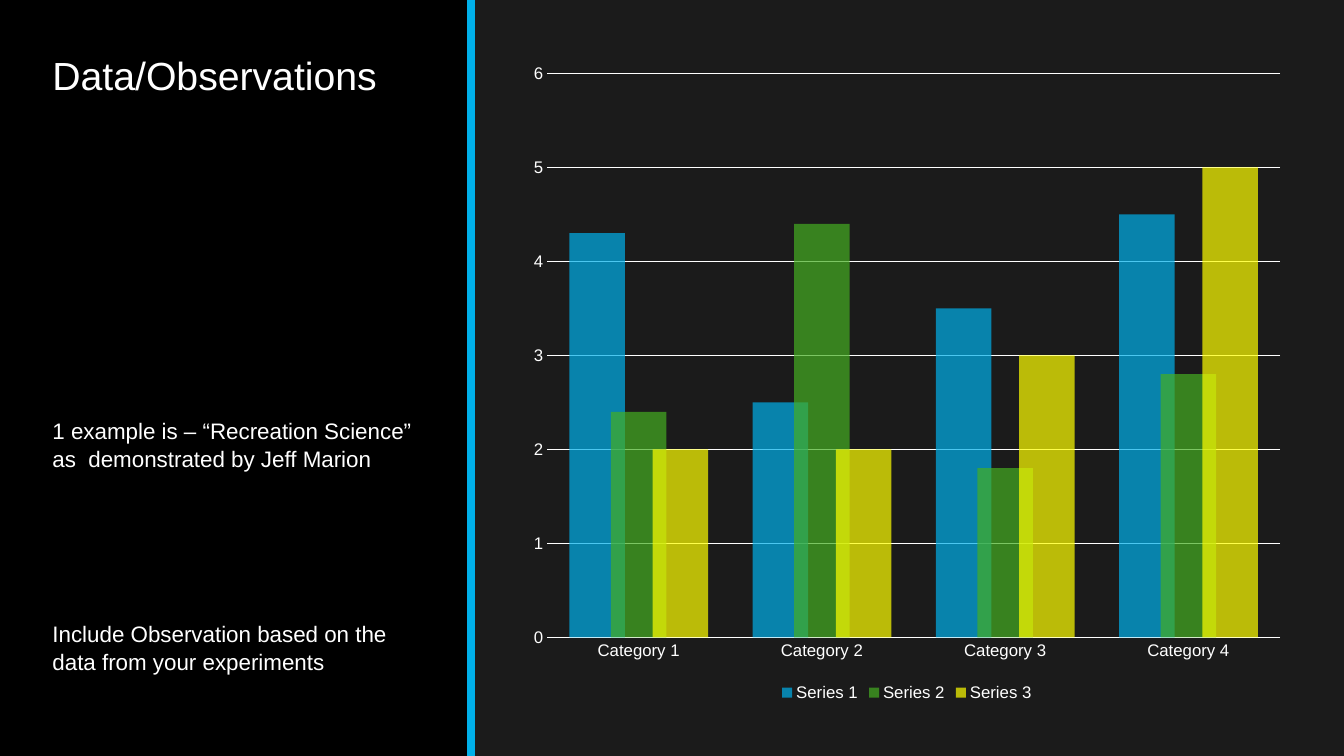
from lxml import etree
from pptx import Presentation
from pptx.chart.data import CategoryChartData
from pptx.dml.color import RGBColor
from pptx.enum.chart import XL_CHART_TYPE, XL_LEGEND_POSITION, XL_TICK_MARK
from pptx.enum.shapes import MSO_CONNECTOR, MSO_SHAPE
from pptx.enum.text import MSO_ANCHOR, MSO_AUTO_SIZE, PP_ALIGN
from pptx.oxml.ns import qn
from pptx.util import Emu, Pt

COLUMNS = XL_CHART_TYPE.COLUMN_CLUSTERED
LEGEND_BOTTOM = XL_LEGEND_POSITION.BOTTOM
NO_TICK = XL_TICK_MARK.NONE
STRAIGHT = MSO_CONNECTOR.STRAIGHT
RECTANGLE = MSO_SHAPE.RECTANGLE
TOP, BOTTOM = MSO_ANCHOR.TOP, MSO_ANCHOR.BOTTOM
NO_AUTOFIT = MSO_AUTO_SIZE.NONE
LEFT = PP_ALIGN.LEFT

EMU_PER_PX = 9144  # 100 px to the inch
SLIDE_W, SLIDE_H = 1333, 750
PANEL_W = 467
FONT = "Arial"
COLORS = {
    "background": "1B1B1B",
    "panel": "000000",
    "text": "FFFFFF",
    "blue": "00B0EA",
    "green": "45AE22",
    "yellow": "FFFF00",
}
BAR_OPACITY = 70
CATEGORIES = [f"Category {number}" for number in range(1, 5)]
SERIES = [
    ("Series 1", (4.3, 2.5, 3.5, 4.5), "blue"),
    ("Series 2", (2.4, 4.4, 1.8, 2.8), "green"),
    ("Series 3", (2, 2, 3, 5), "yellow"),
]
OBSERVATIONS = [
    "1 example is – “Recreation Science” as  demonstrated by Jeff Marion",
    "Include Observation based on the data from your experiments",
]


def px(length):
    return Emu(length * EMU_PER_PX)


def rgb(name):
    return RGBColor.from_string(COLORS[name])


def set_all(target, values):
    for attribute, value in values.items():
        setattr(target, attribute, value)


def set_fill(fill, color):
    fill.solid()
    fill.fore_color.rgb = rgb(color)


def set_line(line, color, points):
    line.color.rgb = rgb(color)
    line.width = Pt(points)


def set_font(font, points):
    set_all(font, {"name": FONT, "size": Pt(points), "bold": False})
    font.color.rgb = rgb("text")


def add_side_panel(slide, title):
    """Add the dark panel behind the title, with its blue edge."""
    panel = slide.shapes.add_shape(RECTANGLE, 0, 0, px(PANEL_W), px(SLIDE_H))
    panel.shadow.inherit = False
    set_fill(panel.fill, "panel")
    panel.line.fill.background()
    edge = slide.shapes.add_connector(
        STRAIGHT, px(PANEL_W), 0, px(PANEL_W), px(SLIDE_H))
    set_line(edge.line, "blue", 6)
    etree.SubElement(edge._element.spPr, qn("a:effectLst"))
    for backdrop in (panel, edge):
        title._element.addprevious(backdrop._element)


def fill_placeholder(holder, box, texts, points, anchor, spacing, gap=0):
    left, top, width, height = map(px, box)
    set_all(holder, {"left": left, "top": top,
                     "width": width, "height": height})
    frame = holder.text_frame
    frame.text = "\n".join(texts)
    set_all(frame, {"word_wrap": True, "auto_size": NO_AUTOFIT,
                    "vertical_anchor": anchor})
    for index, paragraph in enumerate(frame.paragraphs):
        set_all(paragraph, {"alignment": LEFT, "line_spacing": spacing,
                            "space_before": Pt(gap if index else 0)})
        set_font(paragraph.runs[0].font, points)


def style_axis(axis):
    set_all(axis, {"major_tick_mark": NO_TICK, "minor_tick_mark": NO_TICK})
    set_font(axis.tick_labels.font, 12)


def style_bars(series, color):
    set_fill(series.format.fill, color)
    series.invert_if_negative = False
    tint = series.format.fill._xPr.find(qn("a:solidFill"))[0]
    etree.SubElement(tint, qn("a:alpha"), val=str(BAR_OPACITY * 1000))


def add_column_chart(slide, box):
    data = CategoryChartData()
    data.categories = CATEGORIES
    for name, values, _ in SERIES:
        data.add_series(name, values)
    chart = slide.shapes.add_chart(COLUMNS, *map(px, box), data).chart
    set_font(chart.font, 10)
    set_all(chart, {"has_title": False, "has_legend": True})
    set_all(chart.legend, {"position": LEGEND_BOTTOM,
                           "include_in_layout": False})
    set_font(chart.legend.font, 12)

    category_axis, value_axis = chart.category_axis, chart.value_axis
    for axis in (category_axis, value_axis):
        style_axis(axis)
    set_line(category_axis.format.line, "text", 1.25)
    set_all(value_axis, {"minimum_scale": 0, "maximum_scale": 6,
                         "major_unit": 1, "has_major_gridlines": True})
    value_axis.format.line.fill.background()
    set_line(value_axis.major_gridlines.format.line, "text", 0.75)

    plot = chart.plots[0]
    set_all(plot, {"gap_width": 80, "overlap": 25,
                   "vary_by_categories": False})
    for series, (_, _, color) in zip(plot.series, SERIES):
        style_bars(series, color)


def main():
    deck = Presentation()
    set_all(deck, {"slide_width": px(SLIDE_W), "slide_height": px(SLIDE_H)})
    slide = deck.slides.add_slide(deck.slide_layouts.get_by_name(
        "Content with Caption"))
    set_fill(slide.background.fill, "background")
    title, content, body = slide.placeholders
    content._element.getparent().remove(content._element)

    add_side_panel(slide, title)
    fill_placeholder(title, (42, 51, 383, 175), ["Data/Observations"],
                     28, TOP, 0.9)
    fill_placeholder(body, (42, 410, 383, 265), OBSERVATIONS,
                     16, BOTTOM, 1.05, gap=105)
    add_column_chart(slide, (514, 51, 771, 649))
    deck.save("out.pptx")


if __name__ == "__main__":
    main()
